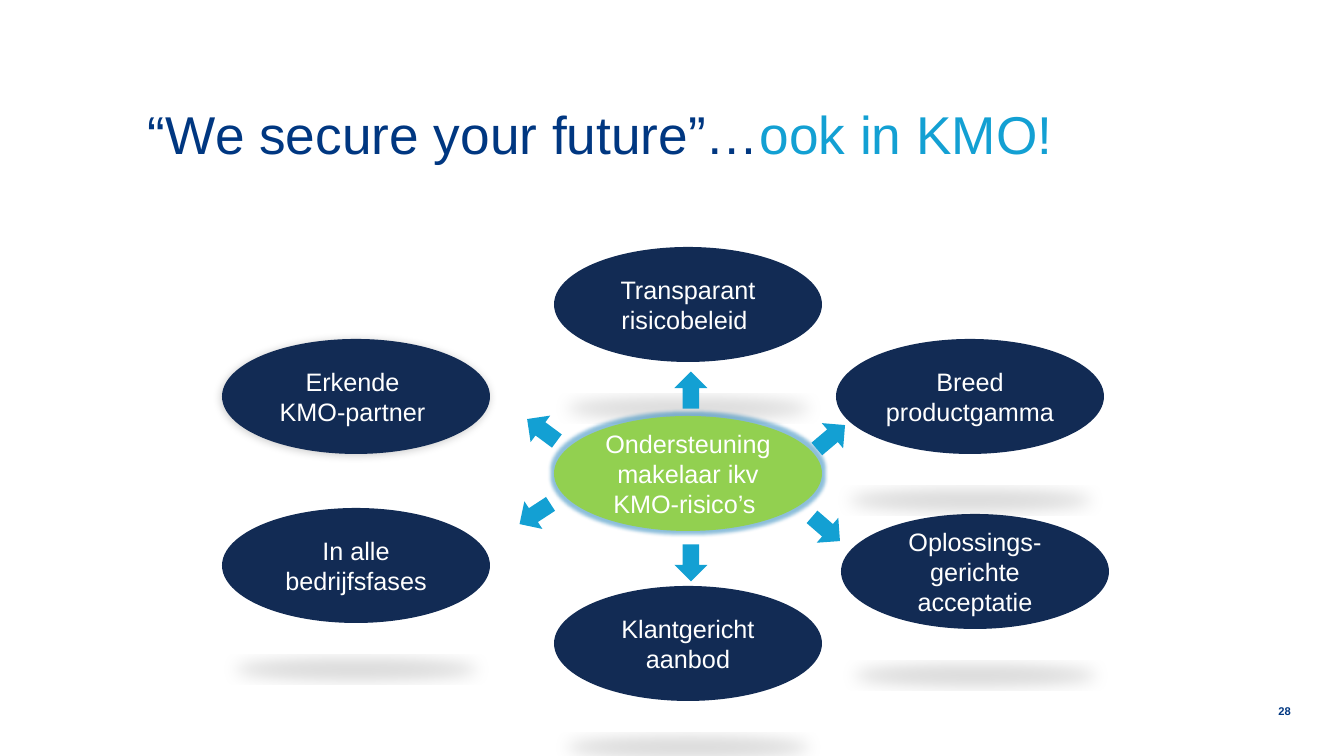
from pptx import Presentation
from pptx.dml.color import RGBColor as RGB
from pptx.enum.shapes import MSO_SHAPE as SHAPE
from pptx.enum.text import MSO_ANCHOR as ANCHOR, PP_ALIGN as ALIGN
from pptx.oxml import parse_xml
from pptx.util import Pt

PX = 914400 / 100.8
HUE = {"blue": "003781", "sky": "13A0D3", "navy": "122B54",
       "green": "92D050", "white": "FFFFFF", "black": "000000", "glow": "0070B0"}
NS = "http://schemas.openxmlformats.org/drawingml/2006/main"

deck = Presentation()
deck.slide_width, deck.slide_height = round(1344 * PX), round(756 * PX)
slide = deck.slides.add_slide(deck.slide_layouts[6])


def add(kind, left, top, wide, high, fill=None):
    box = [round(n * PX) for n in (left, top, wide, high)]
    if kind is None:
        item = slide.shapes.add_textbox(*box)
        frame = item.text_frame
        frame.margin_left = frame.margin_right = 0
        frame.margin_top = frame.margin_bottom = 0
    else:
        item = slide.shapes.add_shape(kind, *box)
        item.shadow.inherit = False
        item.fill.solid()
        item.fill.fore_color.rgb = RGB.from_string(HUE[fill])
        item.line.fill.background()
    item.text_frame.word_wrap = True
    return item


def style(para, size, hue, align):
    para.alignment = align
    para.font.name = "Arial"
    para.font.size = Pt(size)
    para.font.color.rgb = RGB.from_string(HUE[hue])


page = add(None, 1261, 703, 30, 16).text_frame
page.vertical_anchor = ANCHOR.MIDDLE
para = page.paragraphs[0]
para.text = "28"
para.line_spacing = Pt(10)
style(para, 8, "blue", ALIGN.RIGHT)
para.font.bold = True

para = add(None, 148, 112, 1047, 61).text_frame.paragraphs[0]
para.line_spacing = Pt(38)
style(para, 38, "blue", ALIGN.LEFT)
para.add_run().text = "“We secure your future”…"
tail = para.add_run()
tail.text = "ook in KMO!"
tail.font.color.rgb = RGB.from_string(HUE["sky"])

SOFT = ("outerShdw", 'blurRad="76200" dist="12700" dir="8100000"', "black", 20)
FLOOR = ("outerShdw", 'blurRad="152400" dist="317500" dir="5400000" '
         'sx="90000" sy="-19000" rotWithShape="0"', "black", 15)
GLOW = ("glow", 'rad="63500"', "glow", 45)

ovals = [
    ("Erkende \vKMO-partner ", 222, 339, "navy", SOFT),
    ("Klantgericht aanbod", 554, 586, "navy", FLOOR),
    ("Oplossings-gerichte acceptatie", 841, 514, "navy", FLOOR),
    ("Breed productgamma", 836, 339, "navy", FLOOR),
    ("In alle bedrijfsfases", 222, 508, "navy", FLOOR),
    ("Transparant risicobeleid ", 554, 247, "navy", FLOOR),
    ("Ondersteuning makelaar ikv KMO-risico’s ", 554, 416, "green", GLOW),
]
for text, left, top, fill, (tag, attrs, hue, alpha) in ovals:
    oval = add(SHAPE.OVAL, left, top, 268, 115, fill)
    oval.text_frame.vertical_anchor = ANCHOR.MIDDLE
    para = oval.text_frame.paragraphs[0]
    para.text = text
    style(para, 18, "white", ALIGN.CENTER)
    effects = oval._element.spPr.find(f"{{{NS}}}effectLst")
    effects.append(parse_xml(
        f'<a:{tag} xmlns:a="{NS}" {attrs}><a:srgbClr val="{HUE[hue]}">'
        f'<a:alpha val="{alpha * 1000}"/></a:srgbClr></a:{tag}>'))

WIDE, HIGH = 37, 33
arrows = [(691, 390, 270), (691, 563, 90), (535, 514, 146.9),
          (542, 430, 216.5), (831, 437, 319.7), (826, 529, 40.9)]
for mid, row, turn in arrows:
    arrow = add(SHAPE.RIGHT_ARROW, mid - WIDE / 2, row - HIGH / 2, WIDE, HIGH, "sky")
    arrow.rotation = turn

deck.save("out.pptx")
